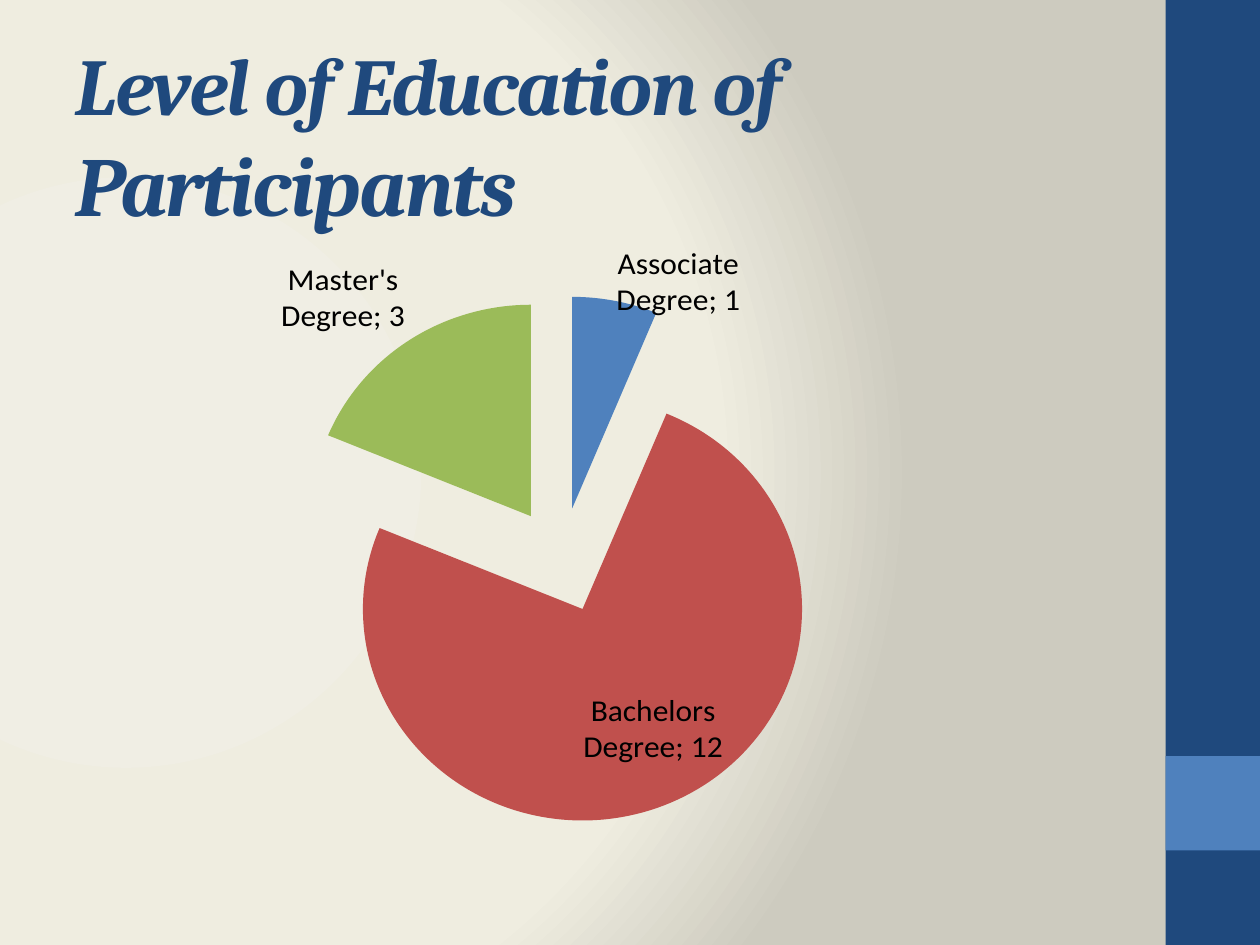
from dataclasses import dataclass

from lxml import etree
from pptx import Presentation
from pptx import util as u
from pptx.chart.data import CategoryChartData
from pptx.dml.color import RGBColor
from pptx.enum import chart as charts, shapes, text
from pptx.oxml import parse_xml
from pptx.oxml.ns import nsdecls, qn


@dataclass(frozen=True)
class Theme:
    navy: str = "1F497D"
    blue: str = "4F81BD"
    black: str = "000000"
    slices: tuple = ("4F81BD", "C0504D", "9BBB59")
    backdrop: tuple = ((0, "F0EEE4"), (75, "EFEDE0"), (100, "CDCBBF"))
    title_font: str = "Cambria"
    label_font: str = "Calibri"
    title_size: int = 46
    title_emphasis_size: int = 48
    label_size: int = 18


THEME = Theme()


def rgb(value):
    return RGBColor.from_string(value)


def style_font(font, name, size, color):
    font.name = name
    font.size = u.Pt(size)
    font.color.rgb = rgb(color)


def paint_background(slide):
    """Circular gradient centred near the left edge."""
    fill = slide.background.fill
    fill.solid()
    solid = slide._element.find(".//" + qn("p:bgPr")).find(qn("a:solidFill"))
    stops = "".join(
        f'<a:gs pos="{position * 1000}"><a:srgbClr val="{color}"/></a:gs>'
        for position, color in THEME.backdrop
    )
    gradient = parse_xml(
        f'<a:gradFill rotWithShape="1" {nsdecls("a")}><a:gsLst>{stops}</a:gsLst>'
        '<a:path path="circle">'
        '<a:fillToRect l="20000" t="50000" r="100000" b="50000"/>'
        "</a:path></a:gradFill>"
    )
    solid.getparent().replace(solid, gradient)


def add_band(slide, top, height, color):
    band = slide.shapes.add_shape(
        shapes.MSO_SHAPE.RECTANGLE,
        u.Inches(9.25), u.Inches(top), u.Inches(0.75), u.Inches(height),
    )
    band.shadow.inherit = False
    band.fill.solid()
    band.fill.fore_color.rgb = rgb(color)
    band.line.fill.background()


def add_title(slide, parts):
    title = slide.shapes.add_textbox(
        u.Inches(0.5), u.Inches(0.3), u.Inches(8.33), u.Inches(1.53)
    )
    frame = title.text_frame
    frame.word_wrap = True
    frame.vertical_anchor = text.MSO_ANCHOR.MIDDLE
    heading = frame.paragraphs[0]
    for words, size in parts:
        run = heading.add_run()
        run.text = words
        style_font(run.font, THEME.title_font, size, THEME.navy)
        run.font.bold = run.font.italic = True
        run._r.get_or_add_rPr().set("spc", "-100")  # tighten by one point


def set_plot_layout(chart, x, y, w, h):
    """Fix the inner plot area, in fractions of the chart."""
    plot_area = chart._chartSpace.chart.plotArea
    for layout in plot_area.findall(qn("c:layout")):
        plot_area.remove(layout)
    settings = (("layoutTarget", "inner"), ("xMode", "edge"), ("yMode", "edge"),
                ("x", x), ("y", y), ("w", w), ("h", h))
    layout = etree.Element(qn("c:layout"))
    manual = etree.SubElement(layout, qn("c:manualLayout"))
    for tag, value in settings:
        etree.SubElement(manual, qn(f"c:{tag}")).set("val", str(value))
    plot_area.insert(0, layout)


def add_education_pie(slide, participants):
    data = CategoryChartData()
    data.categories = list(participants)
    data.add_series("Series 1", list(participants.values()))
    chart = slide.shapes.add_chart(
        charts.XL_CHART_TYPE.PIE_EXPLODED,
        u.Inches(0.5), u.Inches(1.75), u.Inches(8.33), u.Inches(5.25), data,
    ).chart
    chart.has_title = False
    chart.has_legend = False
    style_font(chart.font, THEME.label_font, THEME.label_size, THEME.black)
    set_plot_layout(chart, 0, 0.08, 0.95, 0.83)

    # Slices
    pie = chart.plots[0]
    pie.vary_by_categories = True
    degrees = pie.series[0]
    for index, color in enumerate(THEME.slices):
        fill = degrees.points[index].format.fill
        fill.solid()
        fill.fore_color.rgb = rgb(color)

    # Labels
    labels = degrees.data_labels
    labels.show_category_name = True
    labels.show_value = True
    labels.show_percentage = False


def main():
    deck = Presentation()
    deck.slide_width, deck.slide_height = u.Inches(10), u.Inches(7.5)
    slide = deck.slides.add_slide(deck.slide_layouts[6])

    # Backdrop and side bands
    paint_background(slide)
    add_band(slide, 0, 7.5, THEME.navy)
    add_band(slide, 6, 0.75, THEME.blue)

    # Heading and chart
    add_title(slide, [
        ("Level of Education of ", THEME.title_size),
        ("Participants", THEME.title_emphasis_size),
    ])
    add_education_pie(slide, {
        "Associate Degree": 1,
        "Bachelors Degree": 12,
        "Master's Degree": 3,
    })
    deck.save("out.pptx")


if __name__ == "__main__":
    main()
